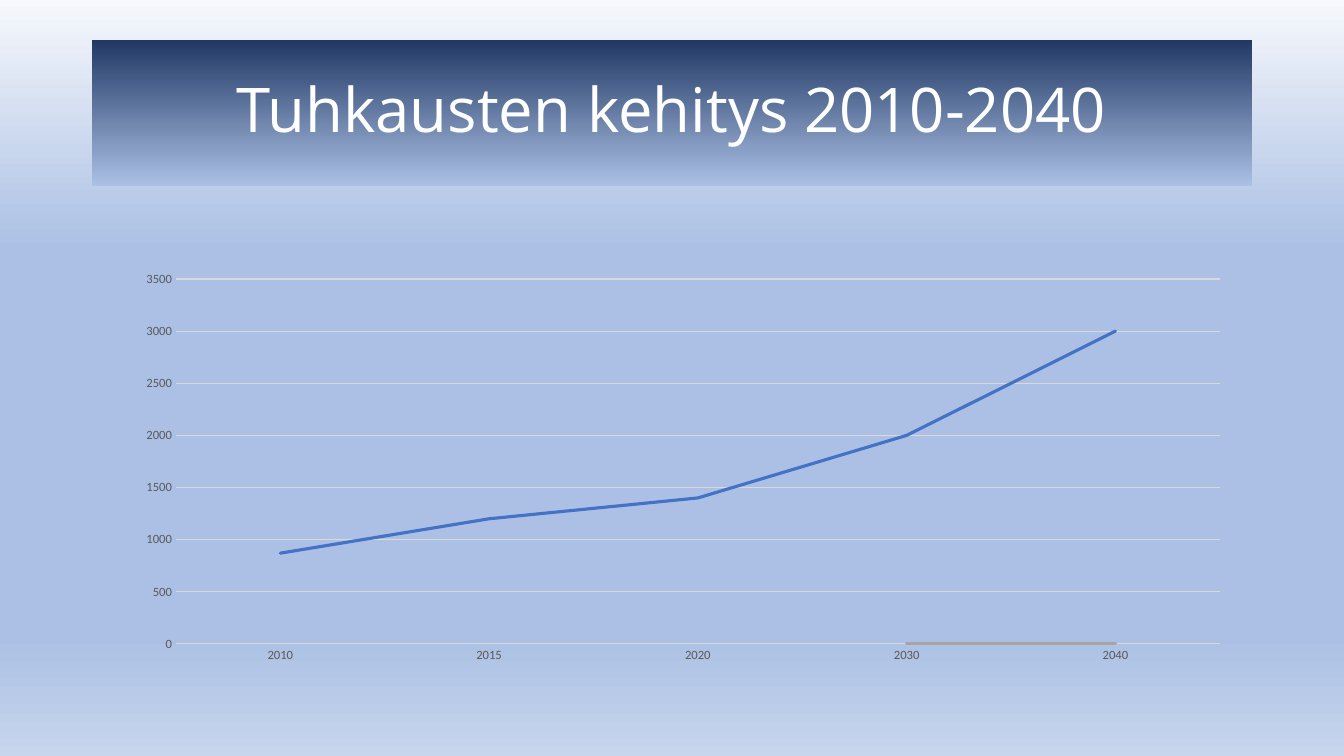
from pptx import Presentation
from pptx.chart.data import CategoryChartData
from pptx.dml.color import RGBColor
from pptx.enum.chart import XL_CHART_TYPE, XL_TICK_MARK
from pptx.enum.text import MSO_ANCHOR, MSO_AUTO_SIZE, PP_ALIGN
from pptx.oxml import parse_xml
from pptx.oxml.ns import nsdecls
from pptx.util import Pt

WIDTH, HEIGHT = 1344, 756
SCALE = 12192000 / WIDTH

WHITE = RGBColor(0xFF, 0xFF, 0xFF)
BLACK = RGBColor(0x00, 0x00, 0x00)
PALE = RGBColor(0xF6, 0xF8, 0xFC)
SKY = RGBColor(0xAB, 0xC0, 0xE4)
MIST = RGBColor(0xC7, 0xD5, 0xED)
NAVY = RGBColor(0x20, 0x38, 0x64)
BLUE = RGBColor(0x44, 0x72, 0xC4)
GREY = RGBColor(0xA5, 0xA5, 0xA5)
LABEL = RGBColor(0x59, 0x59, 0x59)
GRID = RGBColor(0xD9, 0xD9, 0xD9)

YEARS = ["2010", "2015", "2020", "2030", "2040"]
SERIES = [
    ("Series 1", [870, 1200, 1400, 2000, 3000], BLUE),
    ("Series 2", [None, None, None, 0, 0], GREY),
]


def px(n):
    return round(n * SCALE)


def stroke(line, color, width):
    line.color.rgb = color
    line.width = Pt(width)


def style(font, name, size, color):
    font.name = name
    font.size = Pt(size)
    font.color.rgb = color


class Deck:
    head = "Open Sans"
    text = "Calibri"

    def __init__(self):
        self.prs = Presentation()
        self.prs.slide_width = px(WIDTH)
        self.prs.slide_height = px(HEIGHT)
        self.slide = self.prs.slides.add_slide(self.prs.slide_layouts[5])

    def blend(self, fill, root, stops):
        """Fill from top to bottom with (percent, colour) stops; root holds the fill."""
        fill.gradient()
        fill.gradient_angle = 270
        box = root.xpath(".//a:gsLst")[0]
        for old in list(box):
            box.remove(old)
        for pos, color in stops:
            box.append(parse_xml(
                f'<a:gs {nsdecls("a")} pos="{pos * 1000}">'
                f'<a:srgbClr val="{color}"/></a:gs>'))

    def backdrop(self, stops):
        self.blend(self.slide.background.fill, self.slide.element.cSld.bg, stops)

    def title(self, text, x, y, w, h, stops):
        shape = self.slide.shapes.title
        shape.left, shape.top, shape.width, shape.height = map(px, (x, y, w, h))
        self.blend(shape.fill, shape.element, stops)
        frame = shape.text_frame
        frame.text = text
        frame.word_wrap = True
        frame.auto_size = MSO_AUTO_SIZE.NONE
        frame.vertical_anchor = MSO_ANCHOR.MIDDLE
        para = frame.paragraphs[0]
        para.alignment = PP_ALIGN.CENTER
        para.line_spacing = 0.9
        style(para.font, self.head, 44, WHITE)

    def chart(self, cats, series, x, y, w, h, plot):
        """Draw a line chart; plot is the inner area in px of the slide."""
        data = CategoryChartData()
        data.categories = cats
        for name, vals, _ in series:
            data.add_series(name, vals)
        chart = self.slide.shapes.add_chart(
            XL_CHART_TYPE.LINE, *map(px, (x, y, w, h)), data).chart
        chart.has_legend = False
        chart.has_title = False
        style(chart.font, self.text, 10, BLACK)
        for line, (_, _, color) in zip(chart.plots[0].series, series):
            line.smooth = False
            stroke(line.format.line, color, 2.25)
        for edge in chart.element.xpath(".//c:ser/c:spPr/a:ln"):
            edge.set("cap", "rnd")
        for axis in (chart.category_axis, chart.value_axis):
            axis.major_tick_mark = axis.minor_tick_mark = XL_TICK_MARK.NONE
            style(axis.tick_labels.font, self.text, 9, LABEL)
        stroke(chart.category_axis.format.line, GRID, 0.75)
        axis = chart.value_axis
        axis.minimum_scale, axis.maximum_scale, axis.major_unit = 0, 3500, 500
        axis.format.line.fill.background()
        axis.has_major_gridlines = True
        stroke(axis.major_gridlines.format.line, GRID, 0.75)
        left, top, wide, high = plot
        self.place(chart, ((left - x) / w, (top - y) / h, wide / w, high / h))

    def place(self, chart, plot):
        """Pin the inner plot area at fractions of the chart frame."""
        area = chart.element.xpath(".//c:plotArea")[0]
        for old in area.xpath("./c:layout"):
            area.remove(old)
        modes = "".join(f'<c:{k}Mode val="edge"/>' for k in "xy")
        sizes = "".join(f'<c:{k} val="{v:.4f}"/>' for k, v in zip("xywh", plot))
        area.insert(0, parse_xml(
            f'<c:layout {nsdecls("c")}><c:manualLayout>'
            f'<c:layoutTarget val="inner"/>{modes}{sizes}'
            '</c:manualLayout></c:layout>'))


def main():
    deck = Deck()
    deck.backdrop([(0, PALE), (33, SKY), (84, SKY), (100, MIST)])
    deck.title("Tuhkausten kehitys 2010-2040", 92, 40, 1160, 146,
               [(0, NAVY), (100, SKY)])
    deck.chart(YEARS, SERIES, 92, 186, 1160, 530, (176, 279, 1044, 365))
    deck.prs.save("out.pptx")


if __name__ == "__main__":
    main()
